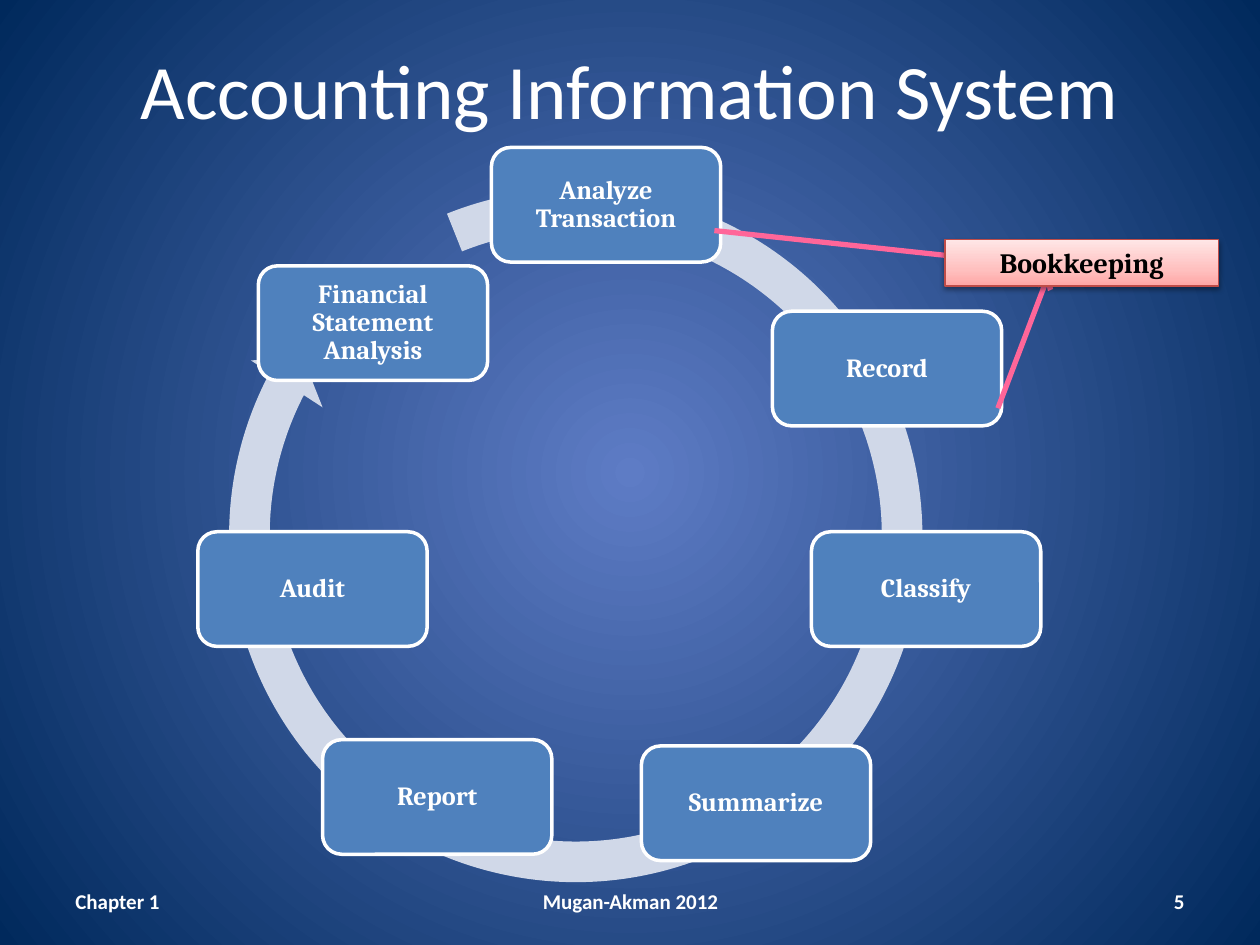
from lxml import etree
from pptx import Presentation
from pptx.dml.color import RGBColor
from pptx.enum.shapes import MSO_CONNECTOR, MSO_SHAPE
from pptx.enum.text import MSO_ANCHOR, PP_ALIGN
from pptx.oxml import parse_xml
from pptx.oxml.ns import nsdecls, qn
from pptx.util import Inches, Pt

LEFT, CENTER, RIGHT = PP_ALIGN.LEFT, PP_ALIGN.CENTER, PP_ALIGN.RIGHT
MIDDLE = MSO_ANCHOR.MIDDLE
STRAIGHT = MSO_CONNECTOR.STRAIGHT
RECTANGLE = MSO_SHAPE.RECTANGLE
ROUNDED_RECTANGLE = MSO_SHAPE.ROUNDED_RECTANGLE
CIRCULAR_ARROW = MSO_SHAPE.CIRCULAR_ARROW

WHITE = RGBColor(0xFF, 0xFF, 0xFF)
BLACK = RGBColor(0x00, 0x00, 0x00)
STEP_BLUE = RGBColor(0x4F, 0x81, 0xBD)
RING_GRAY = RGBColor(0xD0, 0xD8, 0xE8)
LINK_PINK = RGBColor(0xFF, 0x66, 0x99)
CALLOUT_RED = RGBColor(0xBF, 0x4C, 0x48)
BACKGROUND_STOPS = [
    (0, RGBColor(0x5E, 0x7C, 0xC5)),
    (100, RGBColor(0x00, 0x29, 0x5C)),
]
CALLOUT_STOPS = [
    (0, RGBColor(0xFF, 0xA6, 0xA5)),
    (35, RGBColor(0xFF, 0xC0, 0xBF)),
    (100, RGBColor(0xFF, 0xE7, 0xE7)),
]
RADIAL = '<a:path path="circle"><a:fillToRect l="50000" t="50000" r="50000" b="50000"/></a:path>'
UPWARD = '<a:lin ang="16200000" scaled="0"/>'

RING_ADJUSTMENTS = [0.055, 3.307, 145.18, 169.489, 0.058]
STEP_SIZE = (1.82, 0.91)
STEPS = [
    ("Analyze Transaction", 3.9, 1.17),
    ("Record", 6.13, 2.47),
    ("Classify", 6.44, 4.22),
    ("Summarize", 5.09, 5.92),
    ("Report", 2.56, 5.87),
    ("Audit", 1.57, 4.22),
    ("Financial Statement Analysis", 2.05, 2.11),
]
FOOTERS = [
    ("Chapter 1", 0.5, 2.33, LEFT),
    ("Mugan-Akman 2012", 3.42, 3.17, CENTER),
    ("5", 7.17, 2.33, RIGHT),
]
LINKS = [((5.67, 1.83), (8, 2.08)), ((7.92, 3.24), (8.33, 2.16))]


def replace_with_gradient(properties, stops, direction):
    stop_xml = "".join(
        f'<a:gs pos="{position * 1000}"><a:srgbClr val="{color}"/></a:gs>'
        for position, color in stops
    )
    gradient = parse_xml(
        f'<a:gradFill {nsdecls("a")} rotWithShape="1">'
        f"<a:gsLst>{stop_xml}</a:gsLst>{direction}</a:gradFill>"
    )
    properties.replace(properties.find(qn("a:solidFill")), gradient)


def paint_background(slide):
    slide.background.fill.solid()
    slide.background.fill.fore_color.rgb = WHITE
    properties = slide.element.find(".//" + qn("p:bgPr"))
    replace_with_gradient(properties, BACKGROUND_STOPS, RADIAL)


def write_text(shape, text, font_name, size, color, bold, alignment=CENTER):
    frame = shape.text_frame
    frame.word_wrap = True
    frame.vertical_anchor = MIDDLE
    paragraph = frame.paragraphs[0]
    paragraph.text = text
    paragraph.alignment = alignment
    font = paragraph.font
    font.name, font.size, font.bold = font_name, Pt(size), bold
    font.color.rgb = color
    return paragraph


def add_label(slide, box, text, size, bold=False, alignment=CENTER):
    label = slide.shapes.add_textbox(*map(Inches, box))
    write_text(label, text, "Calibri", size, WHITE, bold, alignment)


def add_filled_shape(slide, kind, box, fill, line=None, line_width=0):
    shape = slide.shapes.add_shape(kind, *map(Inches, box))
    shape.shadow.inherit = False
    shape.fill.solid()
    shape.fill.fore_color.rgb = fill
    if line is None:
        shape.line.fill.background()
    else:
        shape.line.color.rgb = line
        shape.line.width = Pt(line_width)
    return shape


def add_ring(slide):
    ring = add_filled_shape(slide, CIRCULAR_ARROW, (1.64, 1.32, 5.86, 5.86), RING_GRAY)
    ring.rotation = 325.7
    for index, value in enumerate(RING_ADJUSTMENTS):
        ring.adjustments[index] = value


def add_step(slide, text, left, top):
    step = add_filled_shape(
        slide, ROUNDED_RECTANGLE, (left, top, *STEP_SIZE), STEP_BLUE, WHITE, 2
    )
    frame = step.text_frame
    frame.margin_left = frame.margin_right = Inches(0.06)
    frame.margin_top = frame.margin_bottom = Inches(0.06)
    paragraph = write_text(step, text, "Cambria", 15, WHITE, True)
    paragraph.line_spacing = 0.9


def add_link(slide, start, end):
    link = slide.shapes.add_connector(STRAIGHT, *map(Inches, (*start, *end)))
    link.line.color.rgb = LINK_PINK
    link.line.width = Pt(3)
    properties = link.element.spPr
    etree.SubElement(properties.find(qn("a:ln")), qn("a:tailEnd"), type="arrow")
    etree.SubElement(properties, qn("a:effectLst"))


def add_callout(slide):
    callout = add_filled_shape(
        slide, RECTANGLE, (7.5, 1.9, 2.17, 0.37), WHITE, CALLOUT_RED, 0.75
    )
    properties = callout.element.spPr
    replace_with_gradient(properties, CALLOUT_STOPS, UPWARD)
    properties.find(qn("a:effectLst")).append(parse_xml(
        f'<a:outerShdw {nsdecls("a")} blurRad="{Pt(3.1)}" dist="{Pt(1.6)}" '
        'dir="5400000" rotWithShape="0">'
        f'<a:srgbClr val="{BLACK}"><a:alpha val="38000"/></a:srgbClr></a:outerShdw>'
    ))
    write_text(callout, "Bookkeeping", "Cambria", 16, BLACK, True)


def main():
    presentation = Presentation()
    presentation.slide_width = Inches(10)
    presentation.slide_height = Inches(7.5)
    slide = presentation.slides.add_slide(presentation.slide_layouts[6])
    paint_background(slide)
    add_label(slide, (0.5, 0.08, 9, 1.25), "Accounting Information System", 44)
    for text, left, width, alignment in FOOTERS:
        add_label(slide, (left, 6.95, width, 0.4), text, 12, True, alignment)
    add_ring(slide)
    for text, left, top in STEPS:
        add_step(slide, text, left, top)
    for start, end in LINKS:
        add_link(slide, start, end)
    add_callout(slide)
    presentation.save("out.pptx")


if __name__ == "__main__":
    main()
